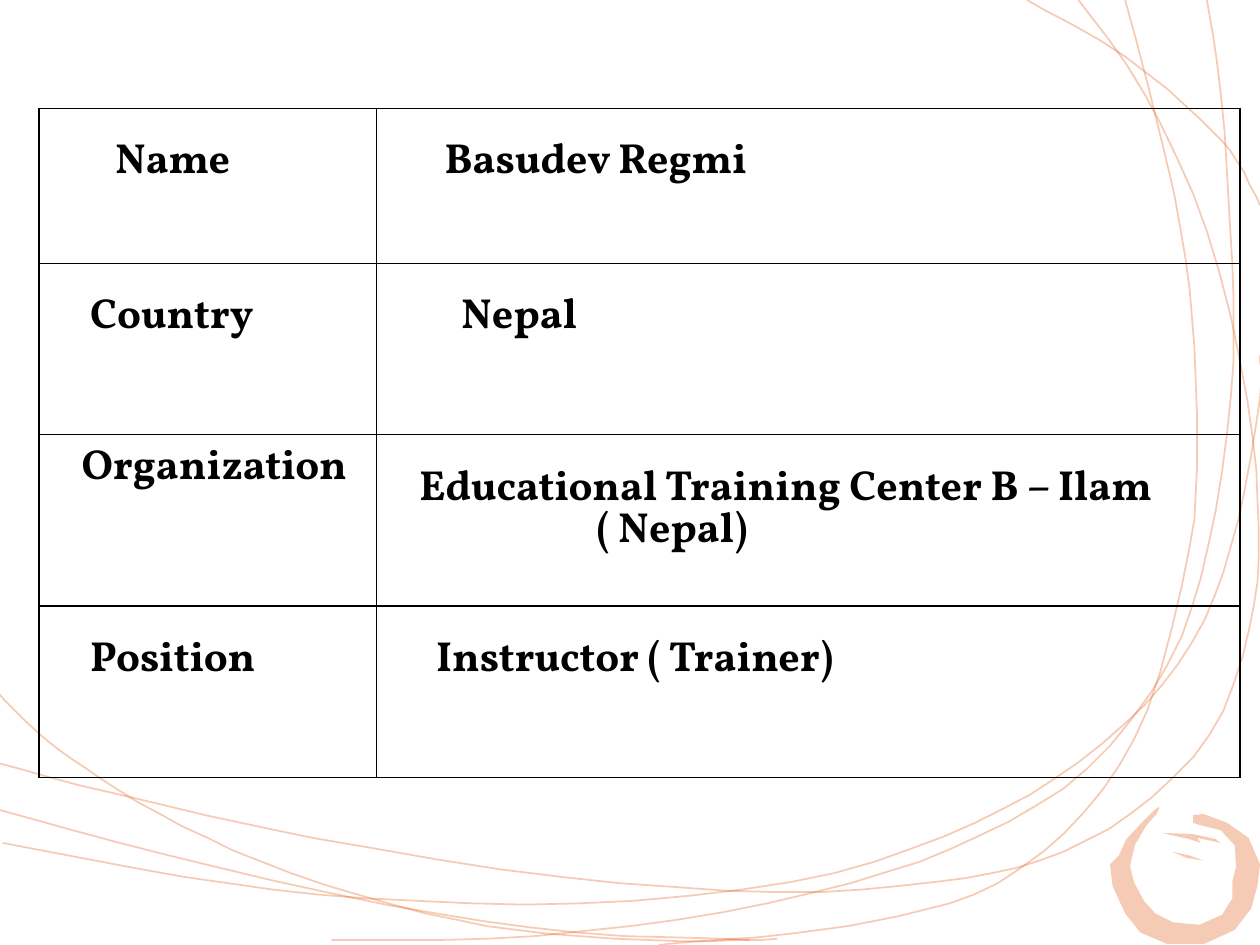
from dataclasses import dataclass
from math import cos, radians, sin
from typing import NamedTuple

from lxml.etree import SubElement
from pptx import Presentation
from pptx.dml.color import RGBColor
from pptx.oxml.ns import qn
from pptx.util import Emu, Inches, Pt

COLORS = {"ink": "000000", "swirl": "E3560E"}
FONT = "Vollkorn"
WIDE, HIGH = 1000, 750  # slide size in grid steps
UNIT = 9144  # one grid step: a hundredth of an inch
PAD = 0.07  # side margin of a cell in inches
SPACE = 0.067  # one step of text indent in inches
LINE = 12  # line pitch in points
BENDS = 4  # straight pieces between two knots of a curve


class Dot(NamedTuple):
    x: float
    y: float


class Rib(NamedTuple):
    """Where the ring's brush band starts and ends at one angle."""
    turn: int  # degrees clockwise from the top
    inner: int
    outer: int


@dataclass
class Entry:
    lines: list[str]
    steps: list[int]  # indent of each line
    skip: int = 3  # line pitches left free above the text


# Knots that each thin curve runs through
CURVES = {
    "bowl": [(-3, 548), (33, 584), (80, 618), (145, 656), (231, 693), (338, 725),
             (434, 741), (540, 747), (617, 745)],
    "loop": [(523, 750), (628, 741), (714, 727), (792, 701), (861, 644), (911, 563),
             (944, 435), (950, 352), (946, 251), (932, 154), (893, 0)],
    "sweep": [(0, 606), (92, 630), (248, 665), (446, 696), (616, 708), (742, 700),
              (825, 683), (897, 646), (960, 583), (991, 501), (999, 420), (990, 318),
              (958, 184), (908, 74), (856, 0)],
    "edge": [(2, 669), (146, 696), (290, 713), (460, 717), (628, 700), (749, 664),
             (837, 618), (908, 560), (956, 492), (983, 412), (1000, 316), (1000, 282)],
    "tower": [(263, 746), (389, 745), (538, 730), (675, 701), (778, 663), (863, 610),
              (927, 527), (959, 433), (977, 314), (978, 207), (969, 75), (958, 0)],
    "corner": [(815, 0), (893, 45), (954, 96), (981, 127), (1000, 163)],
    "base": [(0, 643), (130, 678), (306, 718), (456, 740), (595, 746)],
}

# Brush ring: a band of changing width, open at the top
HUB = Dot(941, 693)
RIBS = [
    Rib(8, 40, 46), Rib(17, 40, 49), Rib(40, 44, 52), Rib(61, 45, 57),
    Rib(83, 40, 59), Rib(100, 38, 58), Rib(118, 42, 59), Rib(139, 44, 60),
    Rib(165, 42, 58), Rib(195, 40, 58), Rib(217, 40, 59), Rib(236, 40, 58),
    Rib(260, 42, 59), Rib(277, 44, 60), Rib(285, 44, 55), Rib(300, 46, 54),
    Rib(320, 49, 53), Rib(334, 52, 56), Rib(338, 55, 57),
]
WISPS = {
    "long": [(922, 661), (947, 662), (965, 666), (969, 669), (950, 665), (953, 669),
             (944, 666)],
    "short": [(930, 676), (944, 679), (955, 683), (942, 681)],
}

# Table grid in inches, and its text
LEFT, TOP = 0.31, 0.86
COLS = [2.68, 6.85]
ROWS = [1.23] + [1.36] * 3
ENTRIES = [
    [Entry(["Name"], [8]), Entry(["Basudev Regmi"], [7])],
    [Entry(["Country"], [5]), Entry(["Nepal"], [9])],
    [Entry(["Organization"], [4], skip=2),
     Entry(["Educational Training Center B – Ilam", "( Nepal)"], [4, 25])],
    [Entry(["Position"], [5]), Entry(["Instructor ( Trainer)"], [6])],
]


def blend(a: float, b: float, c: float, d: float, t: float) -> float:
    """Catmull-Rom value at share t of the way from b to c."""
    return (2 * b + (c - a) * t + (2 * a - 5 * b + 4 * c - d) * t ** 2
            + (3 * b - a - 3 * c + d) * t ** 3) / 2


def bend(knots: list[tuple[int, int]]) -> list[Dot]:
    """Run a smooth curve through the knots."""
    ends = [knots[0], *knots, knots[-1]]
    dots = [Dot(*knots[0])]
    for near in zip(ends, ends[1:], ends[2:], ends[3:]):
        xs, ys = zip(*near)
        for step in range(1, BENDS + 1):
            t = step / BENDS
            dots.append(Dot(blend(*xs, t), blend(*ys, t)))
    return dots


def spoke(turn: int, reach: int) -> Dot:
    """Find the dot at an angle and distance from the ring's hub."""
    angle = radians(turn)
    return Dot(HUB.x + reach * sin(angle), HUB.y - reach * cos(angle))


def ring() -> list[Dot]:
    """Go out along the band's outer rim and back along its inner one."""
    outer = [spoke(rib.turn, rib.outer) for rib in RIBS]
    inner = [spoke(rib.turn, rib.inner) for rib in reversed(RIBS)]
    return outer + inner


def tint(fill, host, share: int) -> None:
    """Fill with the swirl colour at a percentage of opacity."""
    fill.solid()
    fill.fore_color.rgb = RGBColor.from_string(COLORS["swirl"])
    color = next(host.iter(qn("a:srgbClr")))
    SubElement(color, qn("a:alpha"), val=str(share * 1000))


def trace(shapes, dots: list, close: bool):
    pen = shapes.build_freeform(*dots[0], scale=UNIT)
    pen.add_line_segments(dots[1:], close=close)
    shape = pen.convert_to_shape()
    shape.shadow.inherit = False
    return shape


def draw_curve(shapes, knots: list[tuple[int, int]]) -> None:
    shape = trace(shapes, bend(knots), close=False)
    shape.fill.background()
    shape.line.width = Pt(1)
    tint(shape.line.fill, shape.element.spPr, 29)


def draw_brush(shapes, dots: list) -> None:
    shape = trace(shapes, dots, close=True)
    shape.line.fill.background()
    tint(shape.fill, shape.element.spPr, 30)


def rule_cell(cell) -> None:
    """Put a thin line on all four sides."""
    props = cell._tc.get_or_add_tcPr()
    for place, side in enumerate(("lnL", "lnR", "lnT", "lnB")):
        line = SubElement(props, qn(f"a:{side}"), w=str(Pt(1)))
        fill = SubElement(line, qn("a:solidFill"))
        SubElement(fill, qn("a:srgbClr"), val=COLORS["ink"])
        props.insert(place, line)  # borders come before the fill


def fill_cell(cell, entry: Entry) -> None:
    cell.fill.background()
    rule_cell(cell)
    cell.margin_left = cell.margin_right = Inches(PAD)
    cell.margin_top, cell.margin_bottom = Pt(LINE * entry.skip), 0
    frame = cell.text_frame
    frame.text = "\n".join(entry.lines)
    for row, (para, steps) in enumerate(zip(frame.paragraphs, entry.steps)):
        para.line_spacing = Pt(LINE)
        para.space_before = Pt(LINE if row else 0)
        para._p.get_or_add_pPr().set("marL", str(Inches(steps * SPACE)))
        font = para.runs[0].font
        font.name, font.size, font.bold = FONT, Pt(24), True
        font.color.rgb = RGBColor.from_string(COLORS["ink"])


def draw_table(shapes) -> None:
    frame = shapes.add_table(len(ROWS), len(COLS), Inches(LEFT), Inches(TOP),
                             Inches(sum(COLS)), Inches(sum(ROWS)))
    table = frame.table
    table.first_row = table.horz_banding = False
    for col, width in zip(table.columns, COLS):
        col.width = Inches(width)
    for row, height, line in zip(table.rows, ROWS, ENTRIES):
        row.height = Inches(height)
        for cell, entry in zip(row.cells, line):
            fill_cell(cell, entry)


def main() -> None:
    deck = Presentation()
    deck.slide_width, deck.slide_height = Emu(WIDE * UNIT), Emu(HIGH * UNIT)
    shapes = deck.slides.add_slide(deck.slide_layouts[6]).shapes
    # Thin curves, then the brush ring with its wisps
    for knots in CURVES.values():
        draw_curve(shapes, knots)
    for dots in (ring(), *WISPS.values()):
        draw_brush(shapes, dots)
    # Details of the trainer
    draw_table(shapes)
    deck.save("out.pptx")


if __name__ == "__main__":
    main()
